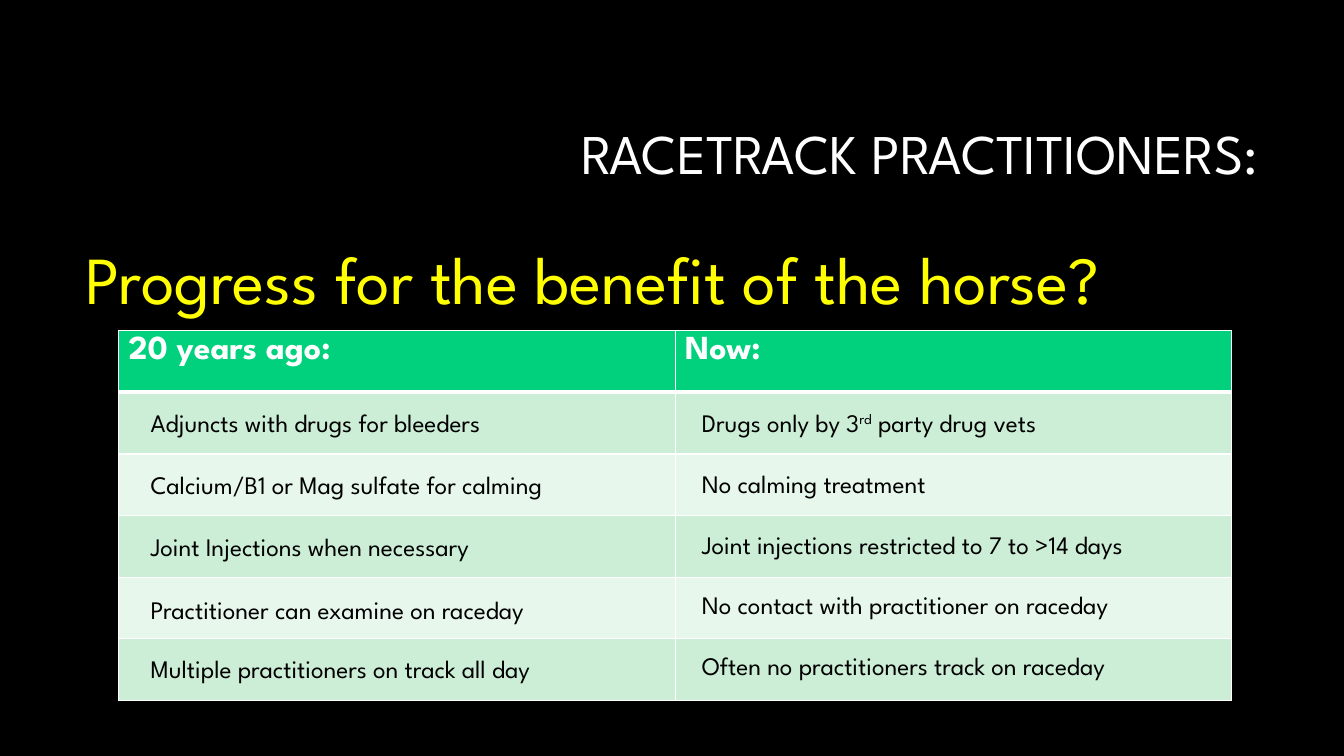
from lxml.etree import SubElement
from pptx import Presentation
from pptx.dml.color import RGBColor as RGB
from pptx.enum.text import MSO_ANCHOR as Anchor, PP_ALIGN as Align
from pptx.oxml.ns import qn
from pptx.util import Emu, Pt

PX = 9525  # EMU per px, 96 px to the inch
FONT = "League Spartan"
COLORS = {
    "background": "000000",
    "title": "FFFFFF",
    "question": "FFFF00",
    "header": "01D17D",
    "header text": "FFFFFF",
    "odd row": "CCEED7",
    "even row": "E7F7EC",
    "entry": "000000",
    "border": "FFFFFF",
}
HEADINGS = ["20 years ago:", "Now:"]
THEN_LEFT, NOW_LEFT = 134, 659

# Entries as (text, top, width); "^" encloses superscript
THEN = [
    ("Adjuncts with drugs for bleeders", 383, 383),
    ("Calcium/B1 or Mag sulfate for calming", 442, 472),
    ("Joint Injections when necessary", 501, 388),
    ("Practitioner can examine on raceday", 561, 461),
    ("Multiple practitioners on track all day", 617, 453),
]
NOW_TOP, NOW_STEP = 383, 58
NOW = [
    ("Drugs only by 3^rd^ party drug vets", 383),
    ("No calming treatment", 280),
    ("Joint injections restricted to 7 to >14 days", 506),
    ("No contact with practitioner on raceday", 497),
    ("Often no practitioners track on raceday", 488),
]


def color(name):
    return RGB.from_string(COLORS[name])


def set_format(target, values):
    for key, value in values.items():
        setattr(target, key, value)


def write(paragraph, text, size, color_name, bold=False):
    for index, part in enumerate(text.split("^")):
        run = paragraph.add_run()
        run.text = part
        set_format(run.font, {"name": FONT, "size": Pt(size), "bold": bold})
        run.font.color.rgb = color(color_name)
        if index % 2:
            run.font._element.set("baseline", "30000")


def add_text(slide, box, text, size, color_name, frame_format, paragraph_format):
    frame = slide.shapes.add_textbox(*(Emu(n * PX) for n in box)).text_frame
    set_format(frame, frame_format)
    paragraph = frame.paragraphs[0]
    set_format(paragraph, paragraph_format)
    write(paragraph, text, size, color_name)


def set_borders(cell, widths):
    properties = cell._tc.get_or_add_tcPr()
    for position, (side, points) in enumerate(widths.items()):
        line = properties.makeelement(qn(f"a:ln{side}"), {"w": str(Pt(points))})
        fill = SubElement(line, qn("a:solidFill"))
        SubElement(fill, qn("a:srgbClr"), val=COLORS["border"])
        properties.insert(position, line)


def add_comparison_table(slide, box):
    table = slide.shapes.add_table(6, 2, *(Emu(n * PX) for n in box)).table
    for row_index, row in enumerate(table.rows):
        band = "odd row" if row_index % 2 else "even row"
        for heading, cell in zip(HEADINGS, row.cells):
            cell.fill.solid()
            cell.fill.fore_color.rgb = color(band if row_index else "header")
            set_borders(cell, {
                "L": 1,
                "R": 1,
                "T": 3 if row_index == 1 else 1,
                "B": 1 if row_index else 3,
            })
            if row_index == 0:
                write(cell.text_frame.paragraphs[0], heading, 24, "header text", True)


def add_entry(slide, text, left, top, width):
    add_text(slide, (left, top, width, 38), text, 18, "entry",
             {"word_wrap": False}, {"alignment": Align.LEFT})


def main():
    deck = Presentation()
    set_format(deck, {"slide_width": Emu(1280 * PX), "slide_height": Emu(720 * PX)})
    slide = deck.slides.add_slide(deck.slide_layouts[6])
    slide.background.fill.solid()
    slide.background.fill.fore_color.rgb = color("background")

    # Title and question
    add_text(slide, (304, 81, 904, 136), "RACETRACK PRACTITIONERS:", 40, "title",
             {"word_wrap": True, "vertical_anchor": Anchor.MIDDLE},
             {"alignment": Align.RIGHT, "line_spacing": 0.9})
    add_text(slide, (72, 230, 1161, 422), "Progress for the benefit of the horse?",
             48, "question", {"word_wrap": True}, {"line_spacing": 0.9})

    # Table with the entries laid over its rows
    add_comparison_table(slide, (113, 315, 1060, 352))
    for text, top, width in THEN:
        add_entry(slide, text, THEN_LEFT, top, width)
    for index, (text, width) in enumerate(NOW):
        add_entry(slide, text, NOW_LEFT, NOW_TOP + index * NOW_STEP, width)

    deck.save("out.pptx")


if __name__ == "__main__":
    main()
